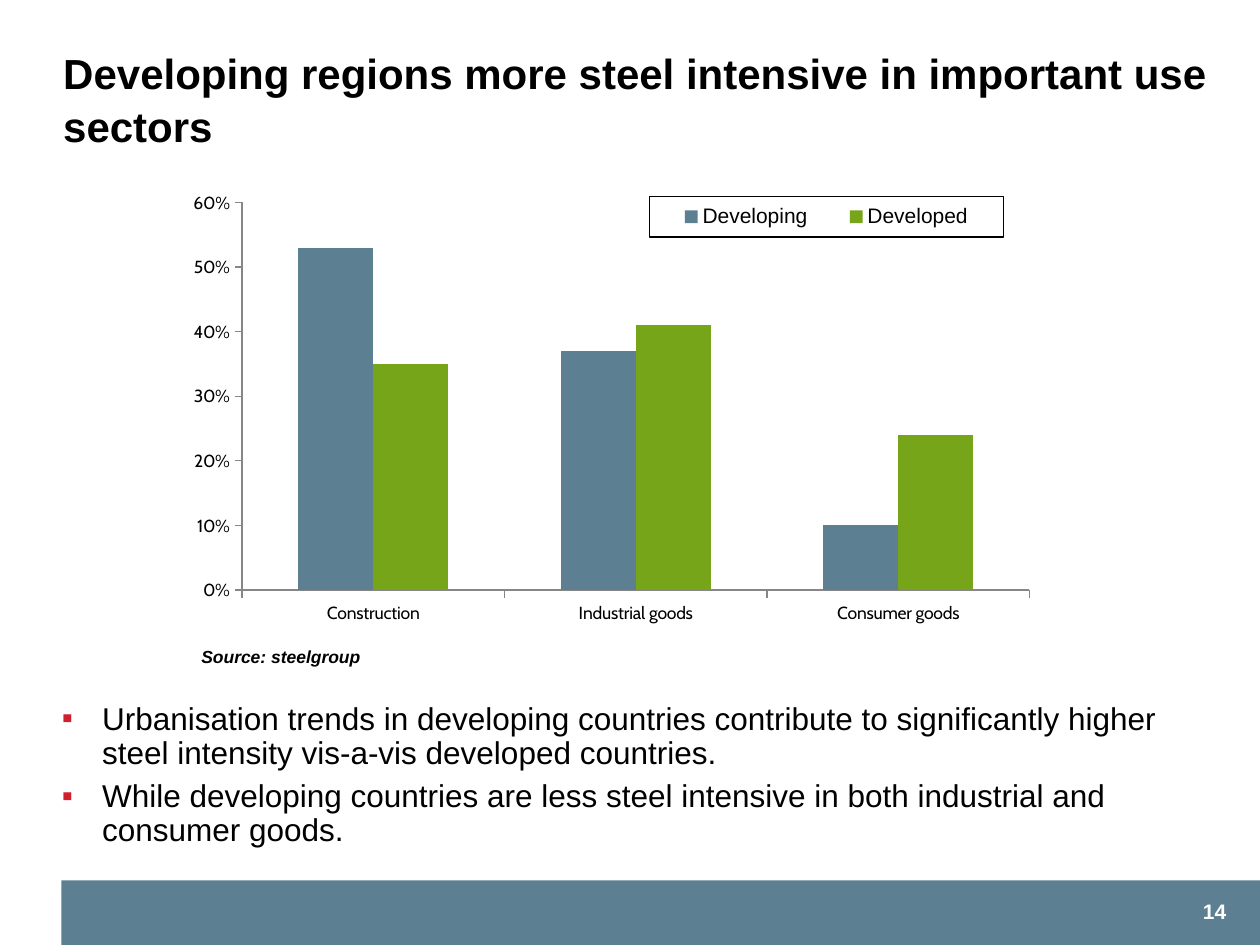
from lxml import etree
from pptx import Presentation
from pptx.chart.data import CategoryChartData
from pptx.dml.color import RGBColor
from pptx.enum.chart import XL_CHART_TYPE as ChartType
from pptx.enum.chart import XL_LEGEND_POSITION as LegendPos
from pptx.enum.chart import XL_TICK_MARK as Tick
from pptx.enum.shapes import MSO_SHAPE as Shape
from pptx.enum.text import MSO_ANCHOR as Anchor
from pptx.enum.text import PP_ALIGN as Align
from pptx.oxml import parse_xml
from pptx.oxml.ns import nsdecls, qn
from pptx.util import Cm, Pt

BLACK = RGBColor(0x00, 0x00, 0x00)
WHITE = RGBColor(0xFF, 0xFF, 0xFF)
SLATE = RGBColor(0x5C, 0x7F, 0x92)
GREEN = RGBColor(0x76, 0xA5, 0x19)
RED = RGBColor(0xD0, 0x20, 0x2E)
GREY = RGBColor(0x86, 0x86, 0x86)

BULLETS = [
    "Urbanisation trends in developing countries contribute to significantly "
    "higher steel intensity vis-a-vis developed countries.",
    "While developing countries are less steel intensive in both industrial "
    "and consumer goods.",
]
CATEGORIES = ["Construction", "Industrial goods", "Consumer goods"]
SERIES = [
    ("Developing", (0.53, 0.37, 0.10), SLATE),
    ("Developed", (0.35, 0.41, 0.24), GREEN),
]


def style_font(font, size, color=BLACK, bold=False, italic=False, name="Arial"):
    font.name = name
    font.size = Pt(size)
    font.bold = bold
    font.italic = italic
    font.color.rgb = color


def add_run(p, text, size, **style):
    r = p.add_run()
    r.text = text
    style_font(r.font, size, **style)


def set_title(slide, text):
    title = slide.shapes.title
    title.left, title.top, title.width, title.height = Cm(1.02), Cm(0.79), Cm(24.31), Cm(1.8)
    tf = title.text_frame
    tf.word_wrap = True
    tf.vertical_anchor = Anchor.TOP
    p = tf.paragraphs[0]
    p.alignment = Align.LEFT
    p.line_spacing = 1.05
    add_run(p, text, 24, bold=True)


def add_text(slide, box, text, size, align=Align.LEFT, **style):
    tf = slide.shapes.add_textbox(*box).text_frame
    tf.word_wrap = True
    p = tf.paragraphs[0]
    p.alignment = align
    add_run(p, text, size, **style)


def add_bar(slide, box, color):
    sp = slide.shapes.add_shape(Shape.RECTANGLE, *box)
    sp.shadow.inherit = False
    sp.fill.solid()
    sp.fill.fore_color.rgb = color
    sp.line.fill.background()


def add_bullets(slide, box, items):
    tf = slide.shapes.add_textbox(*box).text_frame
    tf.word_wrap = True
    tf.margin_left = tf.margin_top = tf.margin_right = tf.margin_bottom = 0
    for i, text in enumerate(items):
        p = tf.paragraphs[0] if i == 0 else tf.add_paragraph()
        p.line_spacing = 0.9
        if i:
            p.space_before = Pt(5.4)
        pPr = p._p.get_or_add_pPr()
        pPr.set("marL", str(Cm(1.5)))
        pPr.set("indent", str(Cm(-0.81)))
        pPr.append(parse_xml(
            f'<a:buClr {nsdecls("a")}><a:srgbClr val="{RED}"/></a:buClr>'))
        etree.SubElement(pPr, qn("a:buFont")).set("typeface", "Arial")
        etree.SubElement(pPr, qn("a:buChar")).set("char", "▪")
        add_run(p, text, 18)


def layout_xml(x, y, w, h, inner=False):
    target = '<c:layoutTarget val="inner"/>' if inner else ""
    return parse_xml(
        f'<c:layout {nsdecls("c")}><c:manualLayout>{target}'
        '<c:xMode val="edge"/><c:yMode val="edge"/>'
        f'<c:x val="{x}"/><c:y val="{y}"/><c:w val="{w}"/><c:h val="{h}"/>'
        '</c:manualLayout></c:layout>')


def place(element, layout, before):
    """Replace an element's layout, keeping the schema order."""
    for old in element.findall(qn("c:layout")):
        element.remove(old)
    element.find(qn(before)).addprevious(layout)


def style_axis(axis):
    axis.has_major_gridlines = False
    axis.major_tick_mark = Tick.OUTSIDE
    axis.minor_tick_mark = Tick.NONE
    axis.format.line.color.rgb = GREY
    axis.format.line.width = Pt(0.75)
    style_font(axis.tick_labels.font, 10, name="Cabin")


def add_column_chart(slide, box):
    data = CategoryChartData(number_format="0%")
    data.categories = CATEGORIES
    for name, values, _ in SERIES:
        data.add_series(name, values)
    chart = slide.shapes.add_chart(ChartType.COLUMN_CLUSTERED, *box, data).chart
    chart.has_title = False
    style_font(chart.font, 10)

    # Columns
    plot = chart.plots[0]
    plot.gap_width = 150
    plot.overlap = 0
    plot.vary_by_categories = False
    for series, (_, _, color) in zip(plot.series, SERIES):
        series.format.fill.solid()
        series.format.fill.fore_color.rgb = color

    # Axes
    style_axis(chart.category_axis)
    axis = chart.value_axis
    style_axis(axis)
    axis.minimum_scale, axis.maximum_scale, axis.major_unit = 0, 0.6, 0.1
    axis.tick_labels.number_format = "0%"
    axis.tick_labels.number_format_is_linked = False
    plot_area = chart._chartSpace.chart.plotArea
    place(plot_area, layout_xml(0.088, 0.066, 0.902, 0.855, inner=True), "c:barChart")

    # Framed legend
    chart.has_legend = True
    legend = chart.legend
    legend.position = LegendPos.RIGHT
    legend.include_in_layout = False
    style_font(legend.font, 12)
    place(legend._element, layout_xml(0.555, 0.053, 0.405, 0.089), "c:overlay")
    legend._element.find(qn("c:overlay")).addnext(parse_xml(
        f'<c:spPr {nsdecls("c", "a")}><a:ln w="9525"><a:solidFill>'
        f'<a:srgbClr val="{BLACK}"/></a:solidFill></a:ln></c:spPr>'))


def main():
    prs = Presentation()
    prs.slide_width, prs.slide_height = Cm(25.4), Cm(19.05)
    slide = prs.slides.add_slide(prs.slide_layouts[5])

    # Footer bar
    add_bar(slide, (Cm(1.24), Cm(17.75), Cm(24.21), Cm(1.32)), SLATE)

    # Message
    add_bullets(slide, (Cm(0.56), Cm(14.17), Cm(23.83), Cm(1.8)), BULLETS)
    set_title(slide, "Developing regions more steel intensive in important use sectors")

    # Source and page number
    add_text(slide, (Cm(3.81), Cm(12.9), Cm(4.65), Cm(0.69)),
             "Source: steelgroup", 10, bold=True, italic=True)
    add_text(slide, (Cm(19.69), Cm(17.98), Cm(5.28), Cm(0.76)),
             "14", 12, align=Align.RIGHT, color=WHITE, bold=True)

    # Steel intensity by sector
    add_column_chart(slide, (Cm(3.33), Cm(3.48), Cm(17.6), Cm(9.14)))

    prs.save("out.pptx")


if __name__ == "__main__":
    main()
